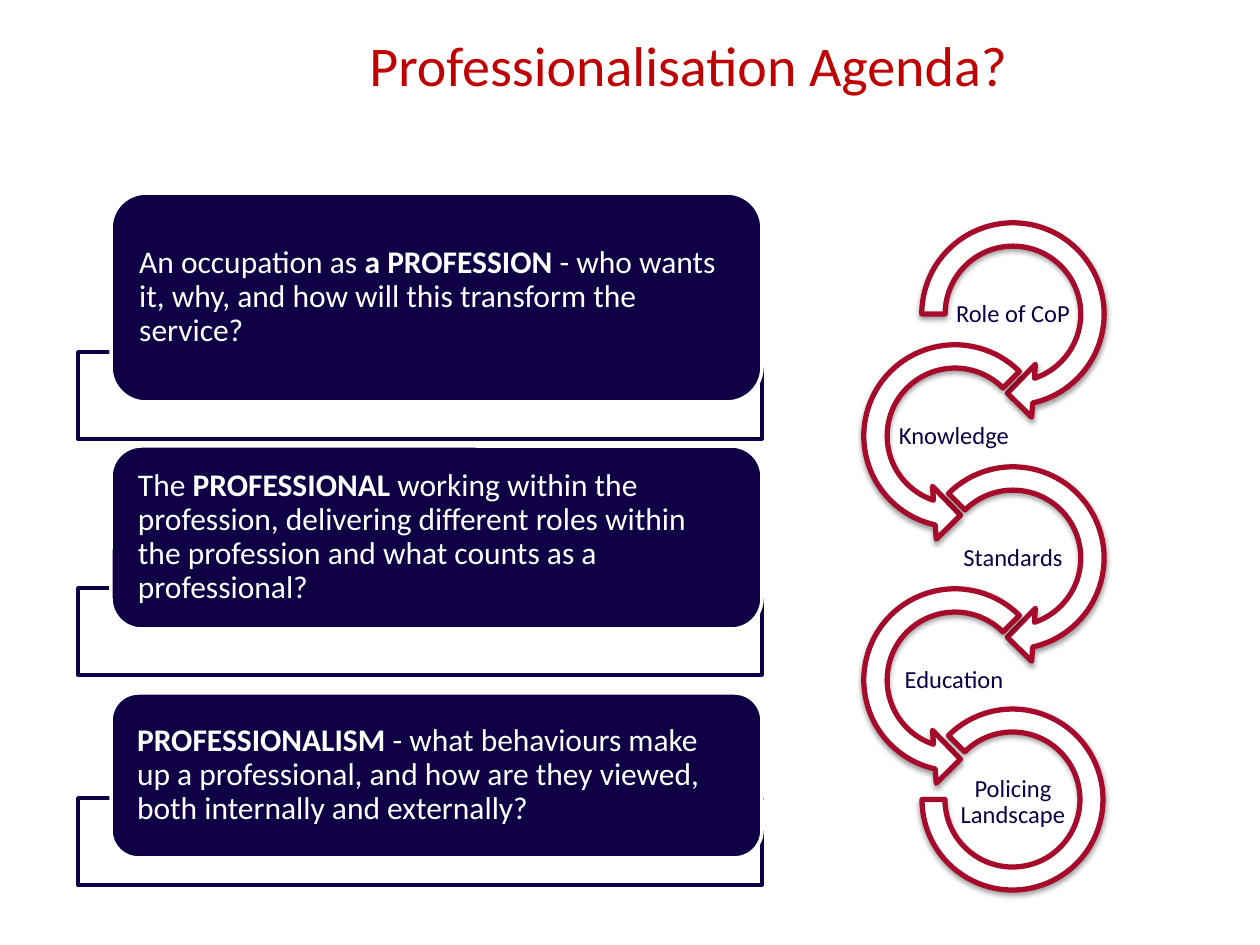
from dataclasses import dataclass

from lxml.etree import SubElement as Sub
from pptx import Presentation
from pptx.dml.color import RGBColor as Rgb
from pptx.enum.shapes import MSO_SHAPE as Kind
from pptx.enum.text import MSO_ANCHOR as Anchor, MSO_AUTO_SIZE as Fit, PP_ALIGN as Align
from pptx.oxml.ns import qn
from pptx.util import Emu, Pt


@dataclass(frozen=True)
class Theme:
    font: str = "Calibri"
    navy: str = "0F0046"
    red: str = "C00000"
    wine: str = "A70B2B"
    white: str = "FFFFFF"
    shade: str = "000000"
    head: int = 32
    body: int = 18
    label: int = 14


THEME = Theme()
SCALE = 914400 / 126

LABELS = ["Role of CoP", "Knowledge", "Standards", "Education", "Policing Landscape"]
TURNS = [(45, 108), (63, 189), (45, 135), (63, 189)]
STEP = 122

POINTS = [
    (193, 209, 352, [
        ("An occupation as ", False),
        ("a PROFESSION ", True),
        ("- who wants it, why, and how will this transform the service?", False),
    ]),
    (446, 183, 588, [
        ("The ", False),
        ("PROFESSIONAL", True),
        (" working within the profession, delivering different roles within "
         "the profession and what counts as a professional?", False),
    ]),
    (693, 165, 798, [
        ("PROFESSIONALISM", True),
        (" - what behaviours make up a professional, and how are they viewed, "
         "both internally and externally?", False),
    ]),
]


def px(num):
    return Emu(round(num * SCALE))


def place(box):
    return [px(num) for num in box]


def pad(frame, side, end):
    frame.margin_left = frame.margin_right = px(side)
    frame.margin_top = frame.margin_bottom = px(end)


def style(para, size, color):
    para.font.name = THEME.font
    para.font.size = Pt(size)
    para.font.color.rgb = Rgb.from_string(color)


def draw(slide, kind, box, fill, line, width):
    shape = slide.shapes.add_shape(kind, *place(box))
    shape.shadow.inherit = False
    shape.fill.solid()
    shape.fill.fore_color.rgb = Rgb.from_string(fill)
    shape.line.color.rgb = Rgb.from_string(line)
    shape.line.width = Pt(width)
    return shape


def add_ring(slide, kind, box, turns):
    ring = draw(slide, kind, box, THEME.white, THEME.wine, 3)
    for num, turn in enumerate(turns):
        ring.adjustments[num] = turn
    glow = ring.element.spPr.find(qn("a:effectLst"))
    drop = Sub(glow, qn("a:outerShdw"), blurRad="40000", dist="20000",
               dir="5400000", rotWithShape="0")
    color = Sub(drop, qn("a:srgbClr"), val=THEME.shade)
    Sub(color, qn("a:alpha"), val="38000")


def add_label(slide, box, text):
    frame = slide.shapes.add_textbox(*place(box)).text_frame
    frame.word_wrap = True
    frame.vertical_anchor = Anchor.MIDDLE
    pad(frame, 1, 1)
    para = frame.paragraphs[0]
    para.text = text
    para.alignment = Align.CENTER
    para.line_spacing = 0.9
    style(para, THEME.label, THEME.navy)


def add_chain(slide):
    for row, text in enumerate(LABELS):
        odd, drop = row % 2, row * STEP
        if row < len(TURNS):
            kind = Kind.LEFT_CIRCULAR_ARROW if odd else Kind.CIRCULAR_ARROW
            box = (849 if odd else 907, 208 + drop, 212, 212)
            add_ring(slide, kind, box, (0.11, 11.42, *TURNS[row], 0.125))
        else:
            add_ring(slide, Kind.BLOCK_ARC, (922, 709, 181, 181), (135, 108, 0.127))
        add_label(slide, (895 if odd else 954, 285 + drop, 118, 59), text)


def add_title(slide, text):
    frame = slide.shapes.add_textbox(*place((357, 24, 670, 81))).text_frame
    frame.word_wrap = False
    frame.auto_size = Fit.SHAPE_TO_FIT_TEXT
    para = frame.paragraphs[0]
    para.text = text
    style(para, THEME.head, THEME.red)


def add_point(slide, top, high, base, parts):
    tray = draw(slide, Kind.RECTANGLE, (78, base, 684, 87), THEME.white, THEME.navy, 2)
    color = tray.element.spPr.find(qn("a:solidFill")).find(qn("a:srgbClr"))
    Sub(color, qn("a:alpha"), val="90000")

    card = draw(slide, Kind.ROUNDED_RECTANGLE, (111, top, 651, high),
                THEME.navy, THEME.white, 2)
    frame = card.text_frame
    frame.word_wrap = True
    frame.vertical_anchor = Anchor.MIDDLE
    pad(frame, 18, 0)
    para = frame.paragraphs[0]
    para.alignment = Align.LEFT
    para.line_spacing = 0.9
    style(para, THEME.body, THEME.white)
    for text, bold in parts:
        run = para.add_run()
        run.text = text
        run.font.bold = bold


def main():
    deck = Presentation()
    deck.slide_width, deck.slide_height = px(1260), px(945)
    slide = deck.slides.add_slide(deck.slide_layouts[6])
    add_chain(slide)
    add_title(slide, "Professionalisation Agenda?")
    for point in POINTS:
        add_point(slide, *point)
    deck.save("out.pptx")


if __name__ == "__main__":
    main()
